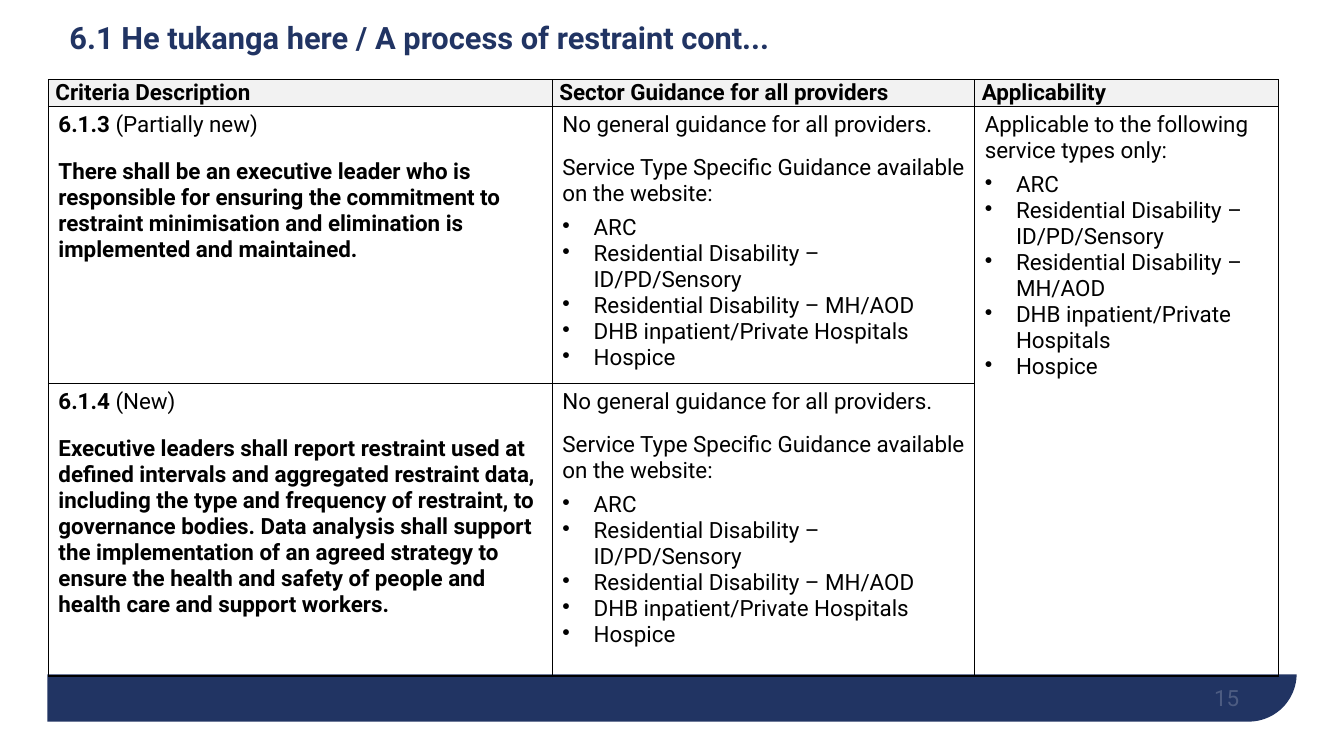
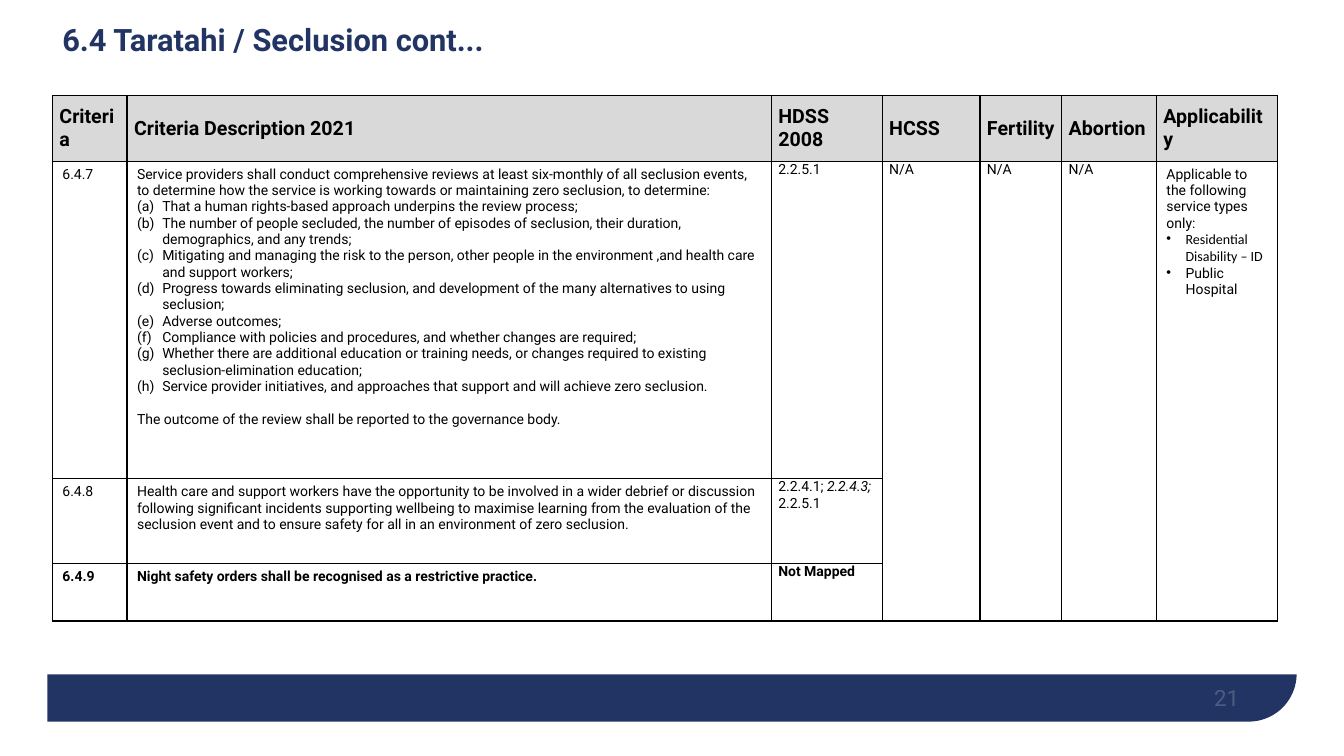
from lxml.etree import SubElement
from pptx import Presentation
from pptx.dml.color import RGBColor
from pptx.enum.shapes import MSO_SHAPE as Shape
from pptx.enum.text import MSO_ANCHOR as Anchor, PP_ALIGN as Align
from pptx.oxml.ns import qn
from pptx.util import Emu, Inches, Pt

NAVY, WHITE, BLACK = "213463", "FFFFFF", "000000"
rgb = RGBColor.from_string

deck = Presentation()
deck.slide_width, deck.slide_height = Inches(13.33), Inches(7.5)
COL, ROW = deck.slide_width / 100, deck.slide_height / 100


def place(left, top, width, height):
    return [Emu(round(n * unit)) for n, unit in
            zip((left, top, width, height), (COL, ROW, COL, ROW))]


def write(frame, text, size=16, bold=False, italic=False, face="Roboto", color=BLACK,
          opacity=100, align=None, before=0, after=0, spacing=None, bullet=None,
          hang=0, join=False):
    paragraph = frame.paragraphs[-1]
    if not join:
        if paragraph.runs:
            paragraph = frame.add_paragraph()
            paragraph.space_before = Pt(before)
        paragraph.space_after = Pt(after)
        paragraph.alignment = align
        paragraph.line_spacing = spacing
        if bullet:
            layout = paragraph._p.get_or_add_pPr()
            layout.set("marL", str(Inches(hang)))
            layout.set("indent", str(-Inches(hang)))
            if bullet == "(a)":
                SubElement(layout, qn("a:buAutoNum"), type="alphaLcParenBoth")
            else:
                SubElement(layout, qn("a:buChar"), char=bullet)
    run = paragraph.add_run()
    run.text = text
    run.font.size, run.font.name = Pt(size), face
    run.font.bold, run.font.italic = bold, italic
    run.font.color.rgb = rgb(color)
    if opacity < 100:
        tint = run._r.find(".//" + qn("a:srgbClr"))
        SubElement(tint, qn("a:alpha"), val=str(opacity * 1000))


heading = dict(bold=True, before=6, after=9)
intro = dict(before=6, after=6)
point = dict(bullet="•", hang=0.31)
small = dict(size=10)
small_bold = dict(size=10, bold=True)
clause = dict(size=10, bullet="(a)", hang=0.25)
small_point = dict(size=10, bullet="•", hang=0.19)

service_types = [(name, point) for name in (
    "ARC", "Residential Disability – ID/PD/Sensory", "Residential Disability – MH/AOD",
    "DHB inpatient/Private Hospitals", "Hospice")]
guidance = [
    ("No general guidance for all providers.", intro),
    ("Service Type Specific Guidance available on the website:", intro),
    *service_types]
review_clauses = [(text, clause) for text in (
    "That a human rights-based approach underpins the review process;",
    "The number of people secluded, the number of episodes of seclusion, their duration, "
    "demographics, and any trends;",
    "Mitigating and managing the risk to the person, other people in the environment ,and "
    "health care and support workers;",
    "Progress towards eliminating seclusion, and development of the many alternatives to "
    "using seclusion;",
    "Adverse outcomes;",
    "Compliance with policies and procedures, and whether changes are required;",
    "Whether there are additional education or training needs, or changes required to "
    "existing seclusion-elimination education;",
    "Service provider initiatives, and approaches that support and will achieve zero "
    "seclusion.")]
not_applicable = [("N/A", small)]

pages = [
    dict(
        number="15", title="6.1 He tukanga here / A process of restraint cont...",
        title_at=(4.43, 1.2, 86.27, 8.13), corner=(3.6, 10.53),
        columns=[37.5, 31.43, 22.58], rows=[3.33, 34.13, 38.67],
        header_fill="F2F2F2", header_size=16, merged=[2], tight=[],
        headers=["Criteria Description", "Sector Guidance for all providers", "Applicability"],
        body=[
            [[("6.1.3 ", heading), ("(Partially new)", dict(join=True)),
              ("There shall be an executive leader who is responsible for ensuring the "
               "commitment to restraint minimisation and elimination is implemented and "
               "maintained.", heading)],
             guidance,
             [("Applicable to the following service types only:", intro), *service_types]],
            [[("6.1.4 ", heading), ("(New)", dict(join=True)),
              ("Executive leaders shall report restraint used at defined intervals and "
               "aggregated restraint data, including the type and frequency of restraint, to "
               "governance bodies. Data analysis shall support the implementation of an agreed "
               "strategy to ensure the health and safety of people and health care and support "
               "workers.", heading)],
             guidance],
        ]),
    dict(
        number="21", title="6.4 Taratahi / Seclusion cont...",
        title_at=(3.9, 1.73, 86.27, 7.6), corner=(3.9, 12.67),
        columns=[5.55, 47.94, 8.25, 7.28, 6.08, 7.05, 9], rows=[8.67, 42, 11.2, 7.6],
        header_fill="D9D9D9", header_size=14, merged=[3, 4, 5, 6], tight=[2, 3, 4, 5],
        headers=["Criteria", "Criteria Description 2021", "HDSS 2008", "HCSS", "Fertility",
                 "Abortion", "Applicability"],
        body=[
            [[("6.4.7", small)],
             [("Service providers shall conduct comprehensive reviews at least six-monthly of "
               "all seclusion events, to determine how the service is working towards or "
               "maintaining zero seclusion, to determine:", small),
              *review_clauses,
              ("The outcome of the review shall be reported to the governance body.",
               dict(size=10, before=12))],
             [("2.2.5.1", small)],
             not_applicable, not_applicable, not_applicable,
             [("Applicable to the following service types only:", small),
              ("Residential Disability – ID", dict(small_point, face="Calibri")),
              ("Public Hospital", small_point)]],
            [[("6.4.8", small)],
             [("Health care and support workers have the opportunity to be involved in a wider "
               "debrief or discussion following significant incidents supporting wellbeing to "
               "maximise learning from the evaluation of the seclusion event and to ensure "
               "safety for all in an environment of zero seclusion.", small)],
             [("2.2.4.1; ", small), ("2.2.4.3;", dict(size=10, italic=True, join=True)),
              (" 2.2.5.1", dict(size=10, join=True))]],
            [[("6.4.9", small_bold)],
             [("Night safety orders shall be recognised as a restrictive practice.",
               small_bold)],
             [("Not Mapped", small_bold)]],
        ]),
]

for page in pages:
    slide = deck.slides.add_slide(deck.slide_layouts[6])

    band = slide.shapes.add_shape(Shape.ROUND_1_RECTANGLE, *place(3.53, 4.93, 92.95, 90.53))
    band.adjustments[0] = 0.07
    band._element.spPr.xfrm.set("flipV", "1")
    paper = slide.shapes.add_shape(Shape.RECTANGLE, *place(0, 0, 100, 89.2))
    for panel, color in ((band, NAVY), (paper, WHITE)):
        panel.shadow.inherit = False
        panel.fill.solid()
        panel.fill.fore_color.rgb = rgb(color)
        panel.line.fill.background()

    page_number = slide.shapes.add_textbox(*place(69.69, 88.67, 22.51, 5.33)).text_frame
    page_number.word_wrap = True
    page_number.vertical_anchor = Anchor.BOTTOM
    page_number.margin_left = page_number.margin_right = 0
    page_number.margin_top = page_number.margin_bottom = 0
    write(page_number, page["number"], color=WHITE, opacity=20, align=Align.RIGHT)

    title = slide.shapes.add_textbox(*place(*page["title_at"])).text_frame
    title.word_wrap = True
    title.vertical_anchor = Anchor.MIDDLE
    write(title, page["title"], size=22, bold=True, color=NAVY, spacing=0.9)

    columns, rows = page["columns"], page["rows"]
    criteria = slide.shapes.add_table(
        len(rows), len(columns), *place(*page["corner"], sum(columns), sum(rows))).table
    criteria.first_row = criteria.horz_banding = False
    for column, share in zip(criteria.columns, columns):
        column.width = Emu(round(share * COL))
    for row, share in zip(criteria.rows, rows):
        row.height = Emu(round(share * ROW))
    for c in page["merged"]:
        criteria.cell(1, c).merge(criteria.cell(len(rows) - 1, c))

    header_style = dict(size=page["header_size"], bold=True)
    content = [[[(text, header_style)] for text in page["headers"]], *page["body"]]
    for r in range(len(rows)):
        for c in range(len(columns)):
            cell = criteria.cell(r, c)
            for side in ("a:lnL", "a:lnR", "a:lnT", "a:lnB"):
                border = SubElement(cell._tc.get_or_add_tcPr(), qn(side), w=str(Pt(1)))
                ink = SubElement(border, qn("a:solidFill"))
                SubElement(ink, qn("a:srgbClr"), val=BLACK)
            if r == 0:
                cell.fill.solid()
                cell.fill.fore_color.rgb = rgb(page["header_fill"])
                cell.vertical_anchor = Anchor.MIDDLE
            else:
                cell.fill.background()
            if r == 0 or c in page["tight"]:
                cell.margin_left = cell.margin_right = Inches(0.07)
                cell.margin_top = cell.margin_bottom = 0
            if c < len(content[r]):
                for text, style in content[r][c]:
                    write(cell.text_frame, text, **style)

deck.save("out.pptx")
